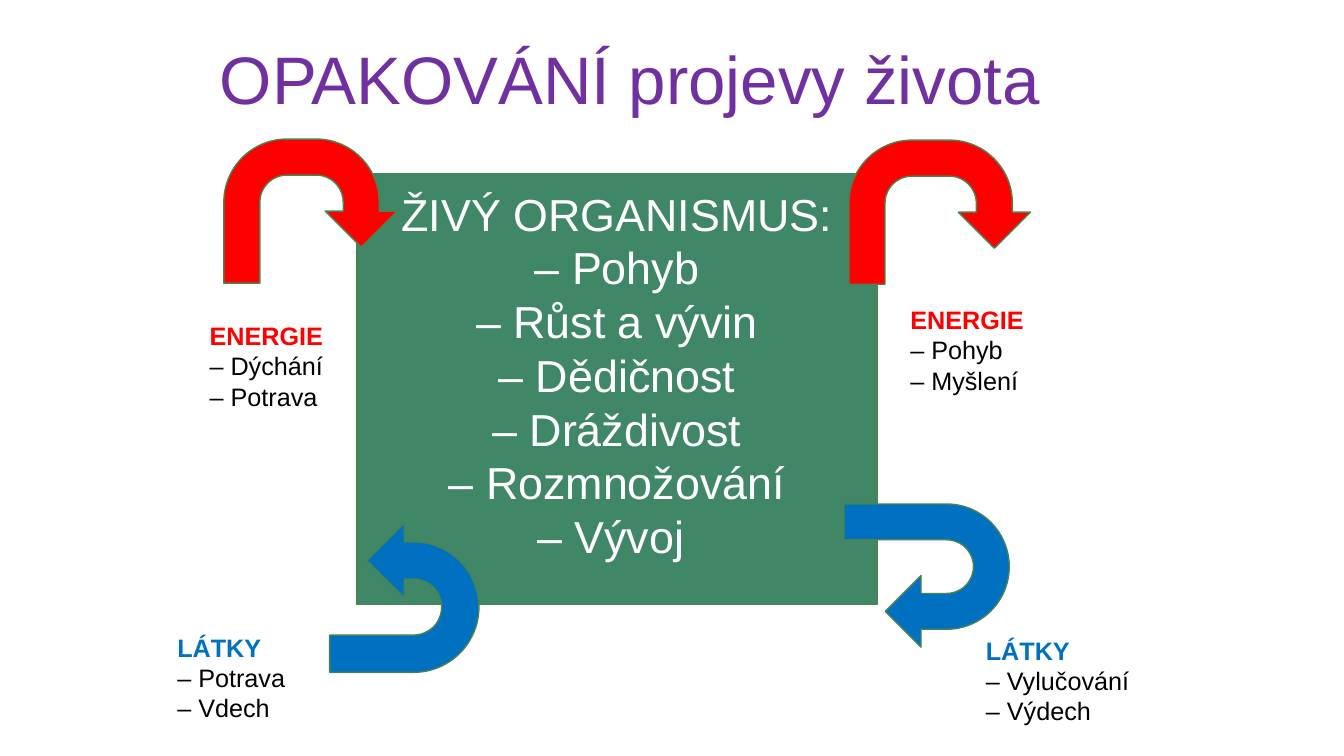
from dataclasses import dataclass

from pptx import Presentation
from pptx.dml.color import RGBColor
from pptx.enum.shapes import MSO_SHAPE
from pptx.enum.text import MSO_ANCHOR, PP_ALIGN
from pptx.util import Inches, Pt


@dataclass(frozen=True)
class Theme:
    font: str = "Arial"
    title: int = 48
    body: int = 32
    label: int = 18
    purple: str = "7030A0"
    green: str = "408768"
    edge: str = "488350"
    red: str = "FF0000"
    blue: str = "0070C0"
    white: str = "FFFFFF"
    black: str = "000000"


class Board:
    def __init__(self, slide, theme):
        self.slide, self.theme = slide, theme

    def fill_text(self, frame, lines, size, color, align=PP_ALIGN.LEFT):
        frame.text = "\n".join(lines)
        for par in frame.paragraphs:
            par.alignment = align
            par.font.name = self.theme.font
            par.font.size = Pt(size)
            par.font.color.rgb = RGBColor.from_string(color)

    def shape(self, kind, place, fill):
        item = self.slide.shapes.add_shape(kind, *map(Inches, place))
        item.shadow.inherit = False
        item.fill.solid()
        item.fill.fore_color.rgb = RGBColor.from_string(fill)
        item.line.color.rgb = RGBColor.from_string(self.theme.edge)
        item.line.width = Pt(1)
        return item

    def panel(self, place, lines):
        frame = self.shape(MSO_SHAPE.RECTANGLE, place, self.theme.green).text_frame
        frame.word_wrap = True
        frame.vertical_anchor = MSO_ANCHOR.MIDDLE
        frame.margin_bottom = Inches(0.34)
        self.fill_text(frame, lines, self.theme.body, self.theme.white,
                       PP_ALIGN.CENTER)

    def arrow(self, place, fill, turn=0, flip=False):
        item = self.shape(MSO_SHAPE.U_TURN_ARROW, place, fill)
        item.rotation = turn
        if flip:
            item._element.spPr.xfrm.set("flipH", "1")

    def text(self, place, lines, size, color, align=PP_ALIGN.LEFT):
        frame = self.slide.shapes.add_textbox(*map(Inches, place)).text_frame
        frame.word_wrap = True
        self.fill_text(frame, lines, size, color, align)
        return frame

    def label(self, place, head, items, color):
        """Add a bold coloured heading above black dashed items."""
        lines = [head] + [f"– {item}" for item in items]
        frame = self.text(place, lines, self.theme.label, self.theme.black)
        top = frame.paragraphs[0].font
        top.bold = True
        top.color.rgb = RGBColor.from_string(color)


def main():
    deck = Presentation()
    deck.slide_width, deck.slide_height = Inches(13.33), Inches(7.5)
    theme = Theme()
    board = Board(deck.slides.add_slide(deck.slide_layouts[6]), theme)

    traits = ["Pohyb", "Růst a vývin", "Dědičnost", "Dráždivost",
              "Rozmnožování", "Vývoj "]
    board.panel((3.54, 1.72, 5.16, 4.28),
                ["ŽIVÝ ORGANISMUS:"] + [f"– {trait}" for trait in traits])
    board.text((1.98, 0.32, 8.54, 0.91), ["OPAKOVÁNÍ projevy života"],
               theme.title, theme.purple, PP_ALIGN.CENTER)

    board.arrow((2.22, 1.38, 1.72, 1.43), theme.red)
    board.arrow((8.42, 1.39, 1.8, 1.43), theme.red)
    board.arrow((3.27, 5.19, 1.48, 1.48), theme.blue, turn=90, flip=True)
    board.arrow((8.48, 4.89, 1.42, 1.64), theme.blue, turn=90)

    for left, top, width, head, items, color in (
        (1.98, 3.13, 1.35, "ENERGIE", ("Dýchání", "Potrava"), theme.red),
        (8.93, 2.97, 1.49, "ENERGIE", ("Pohyb", "Myšlení"), theme.red),
        (1.66, 6.22, 1.28, "LÁTKY", ("Potrava", "Vdech"), theme.blue),
        (9.68, 6.25, 2.04, "LÁTKY", ("Vylučování", "Výdech"), theme.blue),
    ):
        board.label((left, top, width, 1.01), head, items, color)

    deck.save("out.pptx")


if __name__ == "__main__":
    main()
